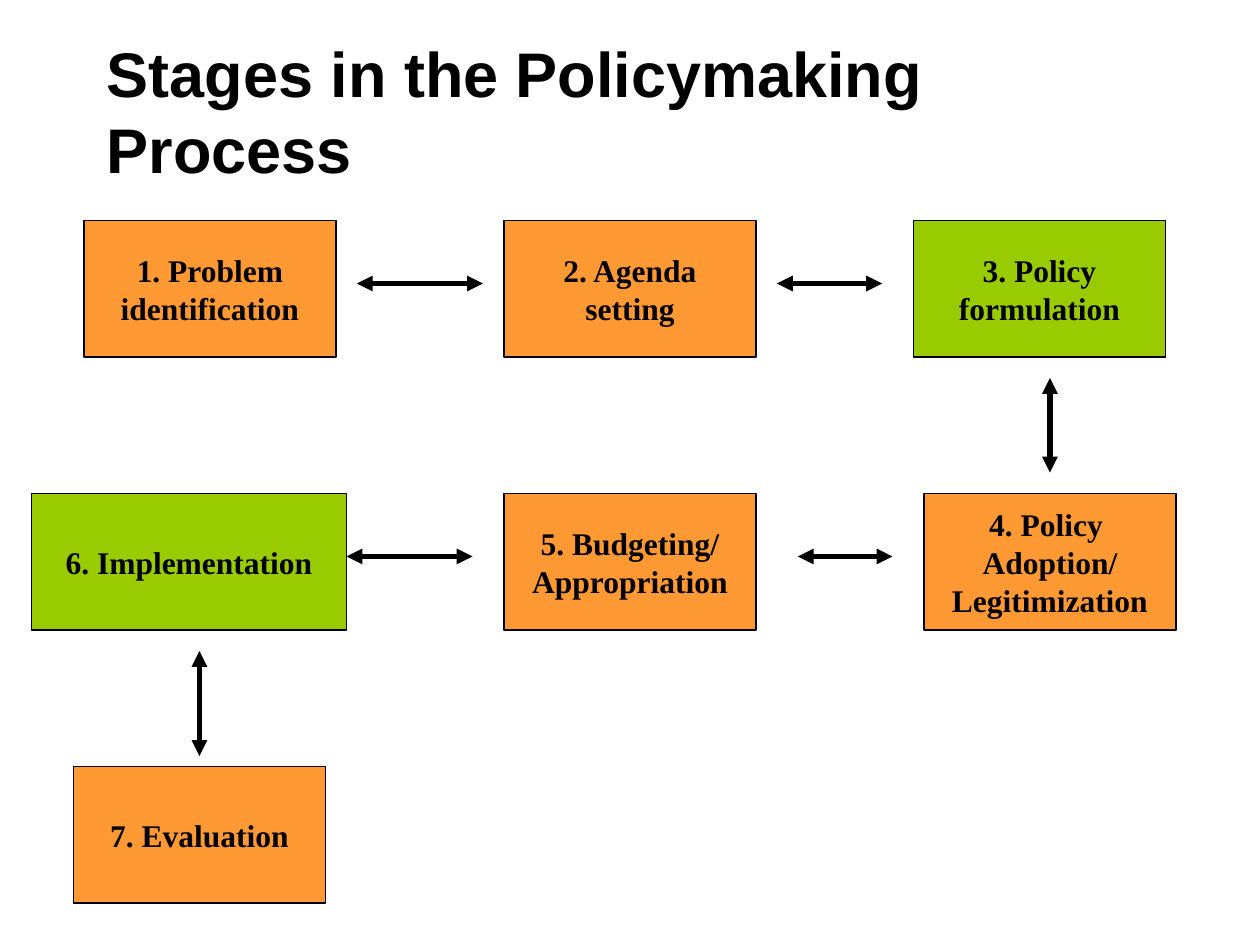
from lxml import etree
from pptx import Presentation
from pptx import util as u
from pptx.dml.color import RGBColor
from pptx.enum import shapes, text
from pptx.oxml.ns import qn

PX = 7620  # EMU per px, 120 px to the inch
COLORS = {"ink": "000000", "orange": "FF9933", "green": "99CC00", "paper": "FFFFFF"}
TITLE_FONT = {"name": "Arial", "size": u.Pt(36), "bold": True}
STAGE_FONT = {"name": "Times New Roman", "size": u.Pt(18), "bold": True}

BOX_W, BOX_H, ROW_STEP = 240, 130, 260
# Stage lines, left, row, width, colour
STAGES = [
    (["1. Problem", "identification"], 50, 0, BOX_W, "orange"),
    (["2. Agenda", "setting"], 450, 0, BOX_W, "orange"),
    (["3. Policy", "formulation"], 840, 0, BOX_W, "green"),
    (["4. Policy ", "Adoption/", "Legitimization"], 850, 1, BOX_W, "orange"),
    (["5. Budgeting/", "Appropriation"], 450, 1, BOX_W, "orange"),
    (["6. Implementation"], 0, 1, 300, "green"),
    (["7. Evaluation"], 40, 2, BOX_W, "orange"),
]
# Arrow ends: x1, y1, x2, y2
ARROWS = [
    (310, 60, 430, 60),
    (710, 60, 810, 60),
    (970, 150, 970, 240),
    (820, 320, 730, 320),
    (420, 320, 300, 320),
    (160, 410, 160, 510),
]


def emu(*lengths):
    return [u.Emu(n * PX) for n in lengths]


def rgb(name):
    return RGBColor.from_string(COLORS[name])


def write(tf, lines, fmt, align, wrap):
    tf.word_wrap = wrap
    tf.vertical_anchor = text.MSO_ANCHOR.MIDDLE
    for i, line in enumerate(lines):
        p = tf.add_paragraph() if i else tf.paragraphs[0]
        p.alignment = align
        r = p.add_run()
        r.text = line
        r.font.color.rgb = rgb("ink")
        for key, value in fmt.items():
            setattr(r.font, key, value)


def add_title(s, x, y, w, h):
    sp = s.shapes.add_textbox(*emu(x, y, w, h))
    write(sp.text_frame, ["Stages in the Policymaking Process"], TITLE_FONT,
          text.PP_ALIGN.LEFT, True)


def add_stage(s, x, y, w, h, lines, color):
    sp = s.shapes.add_shape(shapes.MSO_SHAPE.RECTANGLE, *emu(x, y, w, h))
    sp.shadow.inherit = False
    sp.fill.solid()
    sp.fill.fore_color.rgb = rgb(color)
    sp.line.color.rgb = rgb("ink")
    sp.line.width = u.Pt(0.75)
    write(sp.text_frame, lines, STAGE_FONT, text.PP_ALIGN.CENTER, False)


def add_arrow(s, x1, y1, x2, y2):
    cx = s.shapes.add_connector(shapes.MSO_CONNECTOR.STRAIGHT, *emu(x1, y1, x2, y2))
    cx.line.color.rgb = rgb("ink")
    cx.line.width = u.Pt(3)
    ln = cx.line._get_or_add_ln()
    for end in ("a:headEnd", "a:tailEnd"):
        etree.SubElement(ln, qn(end), type="triangle")
    etree.SubElement(cx._element.spPr, qn("a:effectLst"))


def add_flow(s, x, y):
    # Stage boxes
    for lines, left, row, w, color in STAGES:
        add_stage(s, x + left, y + row * ROW_STEP, w, BOX_H, lines, color)
    # Two-way arrows
    for x1, y1, x2, y2 in ARROWS:
        add_arrow(s, x + x1, y + y1, x + x2, y + y2)


def main():
    prs = Presentation()
    prs.slide_width, prs.slide_height = emu(1200, 900)
    s = prs.slides.add_slide(prs.slide_layouts[6])
    s.background.fill.solid()
    s.background.fill.fore_color.rgb = rgb("paper")
    add_title(s, 90, 30, 1020, 150)
    add_flow(s, 30, 210)
    prs.save("out.pptx")


if __name__ == "__main__":
    main()
